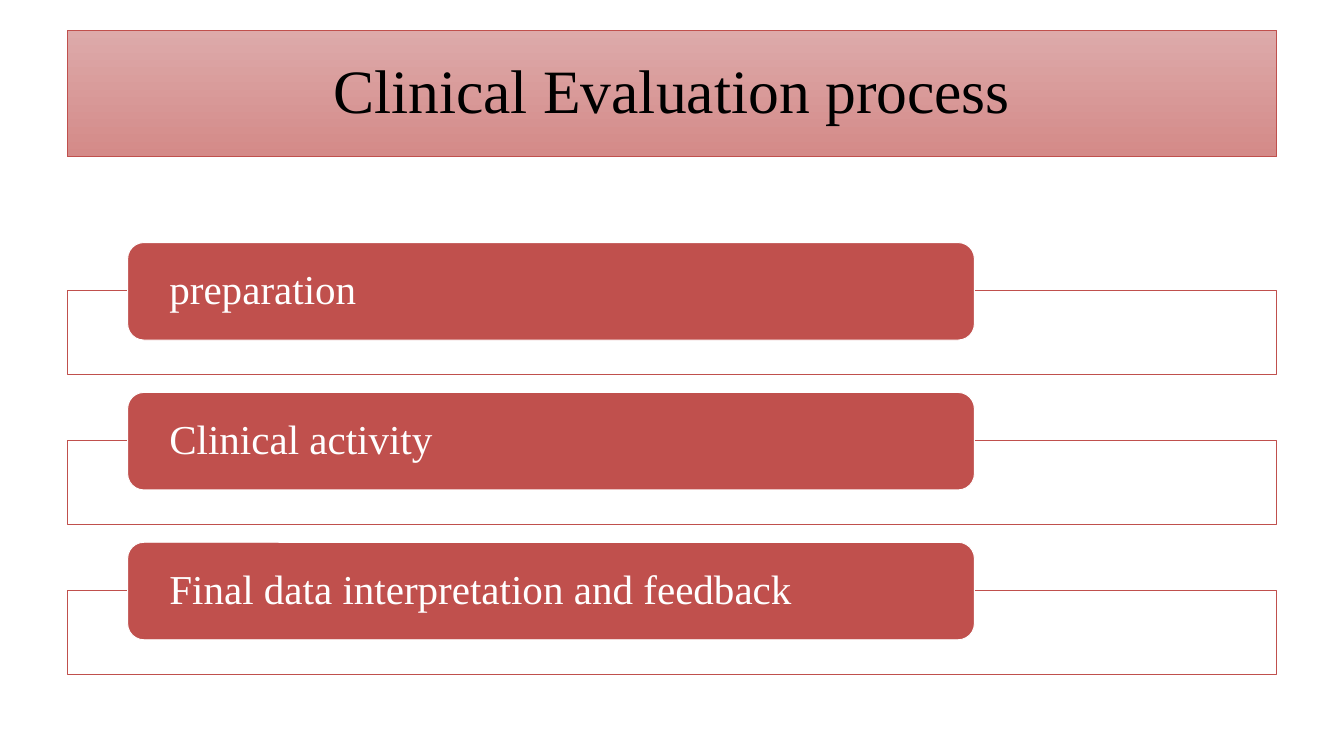
import pptx
import pptx.util
import pptx.dml.color
import pptx.enum.shapes
import pptx.enum.text

RGB = pptx.dml.color.RGBColor
RED = RGB(0xC0, 0x50, 0x4D)
PALE = RGB(0xDD, 0xAA, 0xAA)
ROSE = RGB(0xD4, 0x8A, 0x88)
WHITE = RGB(0xFF, 0xFF, 0xFF)
BLACK = RGB(0, 0, 0)

KIND = pptx.enum.shapes.MSO_SHAPE
ALIGN = pptx.enum.text.PP_ALIGN
MIDDLE = pptx.enum.text.MSO_ANCHOR.MIDDLE
SCALE = 9144  # EMU per px, 100 px to the inch
STEPS = ["preparation", "Clinical activity", "Final data interpretation and feedback"]


def px(num):
    return pptx.util.Emu(num * SCALE)


def place(item, box):
    for name, num in zip(("left", "top", "width", "height"), box):
        setattr(item, name, px(num))


def edge(item, color):
    item.line.color.rgb = color
    item.line.width = pptx.util.Pt(1)


def write(item, text, size, color, align, inset):
    frame = item.text_frame
    frame.text = text
    look = {
        "word_wrap": True,
        "auto_size": pptx.enum.text.MSO_AUTO_SIZE.NONE,
        "vertical_anchor": MIDDLE,
        "margin_left": px(inset),
        "margin_right": px(inset),
        "margin_top": 0,
        "margin_bottom": 0,
    }
    for name, value in look.items():
        setattr(frame, name, value)
    para = frame.paragraphs[0]
    para.alignment = align
    para.line_spacing = 0.9
    font = para.runs[0].font
    font.name = "Times New Roman"
    font.size = pptx.util.Pt(size)
    font.color.rgb = color


def block(slide, kind, box, fill, line):
    item = slide.shapes.add_shape(kind, *map(px, box))
    item.shadow.inherit = False
    item.fill.solid()
    item.fill.fore_color.rgb = fill
    edge(item, line)
    return item


def banner(slide, box, text):
    title = slide.shapes.title
    place(title, box)
    # Gradient runs from top to bottom
    title.fill.gradient()
    title.fill.gradient_angle = 270
    for stop, color in zip(title.fill.gradient_stops, (PALE, ROSE)):
        stop.color.rgb = color
    edge(title, RED)
    write(title, text, 66, BLACK, ALIGN.CENTER, 10)


def process(slide, box, steps):
    left, top, wide, high = box
    pitch = high // len(steps)
    for row, text in enumerate(steps):
        y = top + row * pitch
        # Outlined frame behind, label overlapping its upper edge
        block(slide, KIND.RECTANGLE, (left, y + 72, wide, 124), WHITE, RED)
        label = block(slide, KIND.ROUNDED_RECTANGLE,
                      (left + 90, y, wide * 7 // 10, 145), RED, WHITE)
        write(label, text, 44, WHITE, ALIGN.LEFT, 55)


def main():
    deck = pptx.Presentation()
    deck.slide_width, deck.slide_height = px(2000), px(1125)
    slide = deck.slides.add_slide(deck.slide_layouts[5])
    banner(slide, (100, 45, 1800, 188), "Clinical Evaluation process")
    process(slide, (100, 361, 1800, 670), STEPS)
    deck.save("out.pptx")


if __name__ == "__main__":
    main()
